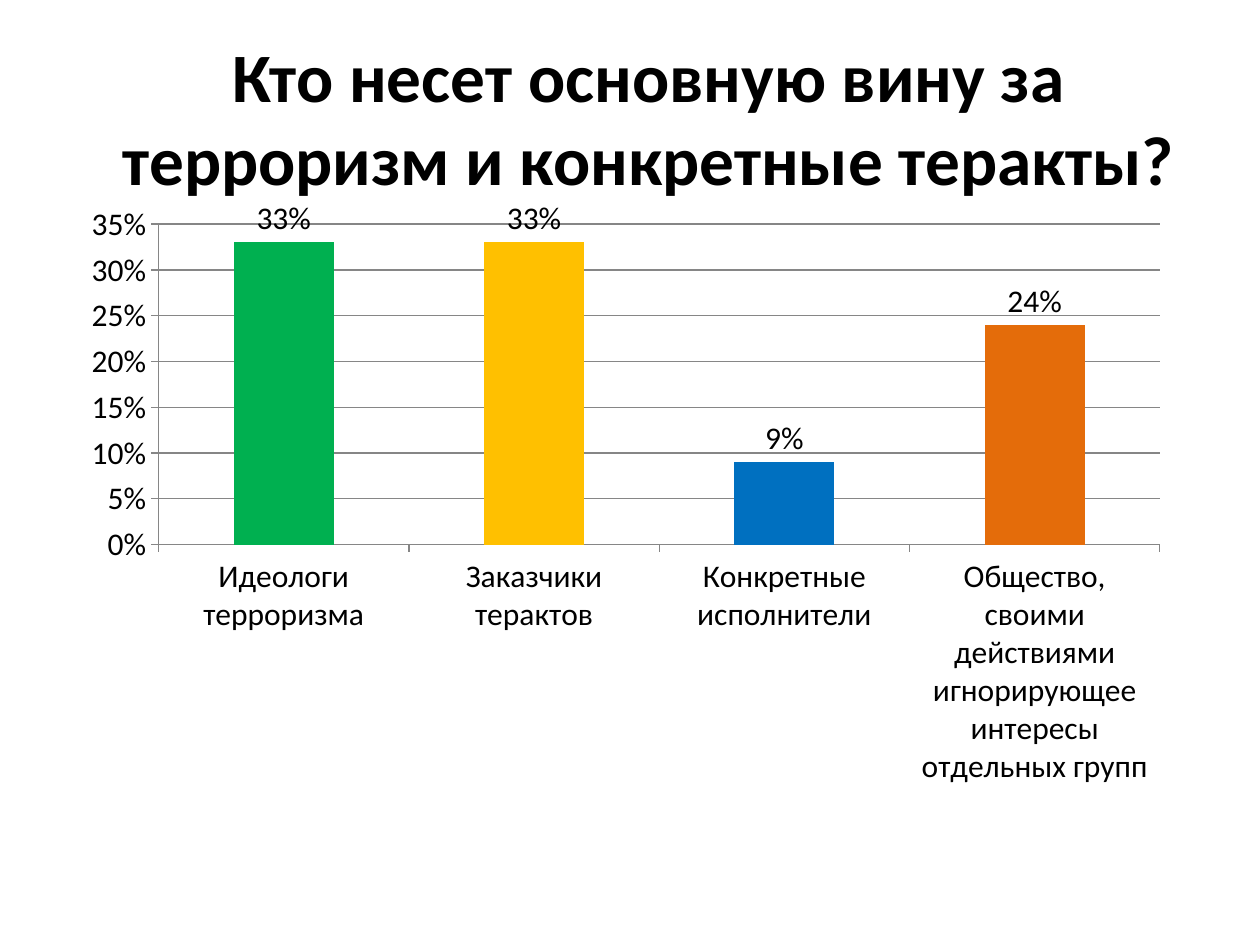
from pptx import Presentation
from pptx.chart.data import CategoryChartData
from pptx.dml.color import RGBColor
from pptx.enum import chart as ch, text as tx
from pptx.util import Cm, Pt

# Content
TITLE = "Кто несет основную вину за терроризм и конкретные теракты?"
BARS = [
    ("Идеологи терроризма", 0.33, "green"),
    ("Заказчики терактов", 0.33, "yellow"),
    ("Конкретные исполнители", 0.09, "blue"),
    ("Общество, своими действиями игнорирующее интересы отдельных групп",
     0.24, "orange"),
]
HUES = {"text": "000000", "line": "868686", "base": "4F81BD", "green": "00B050",
        "yellow": "FFC000", "blue": "0070C0", "orange": "E46C0A"}
FACE = "Calibri"


def hue(name):
    return RGBColor.from_string(HUES[name])


def style(font, size, bold=False):
    font.name, font.size, font.bold = FACE, Pt(size), bold
    font.color.rgb = hue("text")


def write(frame, words, size=18, bold=False, align=tx.PP_ALIGN.CENTER):
    frame.word_wrap = True
    frame.auto_size = tx.MSO_AUTO_SIZE.NONE
    frame.vertical_anchor = tx.MSO_ANCHOR.MIDDLE
    para = frame.paragraphs[0]
    para.alignment = align
    run = para.add_run()
    run.text = words
    style(run.font, size, bold)


def rule(line):
    line.color.rgb = hue("line")
    line.width = Pt(0.75)


deck = Presentation()
deck.slide_width, deck.slide_height = Cm(25.4), Cm(19.05)
slide = deck.slides.add_slide(deck.slide_layouts[5])

# Title
title = slide.shapes.title
title.left, title.top, title.width, title.height = (
    Cm(1.65), Cm(0.76), Cm(22.86), Cm(3.18))
write(title.text_frame, TITLE, size=39.6, bold=True)

# Column chart
data = CategoryChartData(number_format="0%")
data.categories = [name for name, _, _ in BARS]
data.add_series("Series 1", [share for _, share, _ in BARS])
chart = slide.shapes.add_chart(
    ch.XL_CHART_TYPE.COLUMN_CLUSTERED,
    Cm(1.4), Cm(3.89), Cm(22.43), Cm(12.19), data).chart
chart.has_legend = chart.has_title = False
style(chart.font, 18)

# Axes
for axis in (chart.category_axis, chart.value_axis):
    axis.major_tick_mark = ch.XL_TICK_MARK.OUTSIDE
    axis.minor_tick_mark = ch.XL_TICK_MARK.NONE
    rule(axis.format.line)
scale = chart.value_axis
scale.minimum_scale, scale.maximum_scale, scale.major_unit = 0, 0.35, 0.05
scale.tick_labels.number_format = "0%"
scale.tick_labels.number_format_is_linked = False
scale.has_major_gridlines = True
rule(scale.major_gridlines.format.line)

# Bars and their labels
plot = chart.plots[0]
plot.gap_width, plot.vary_by_categories = 150, False
row = plot.series[0]
row.format.fill.solid()
row.format.fill.fore_color.rgb = hue("base")
for i, (_, _, name) in enumerate(BARS):
    fill = row.points[i].format.fill
    fill.solid()
    fill.fore_color.rgb = hue(name)
tags = row.data_labels
tags.show_value = True
tags.number_format, tags.number_format_is_linked = "0%", False
tags.position = ch.XL_LABEL_POSITION.OUTSIDE_END
style(tags.font, 18)

deck.save("out.pptx")
